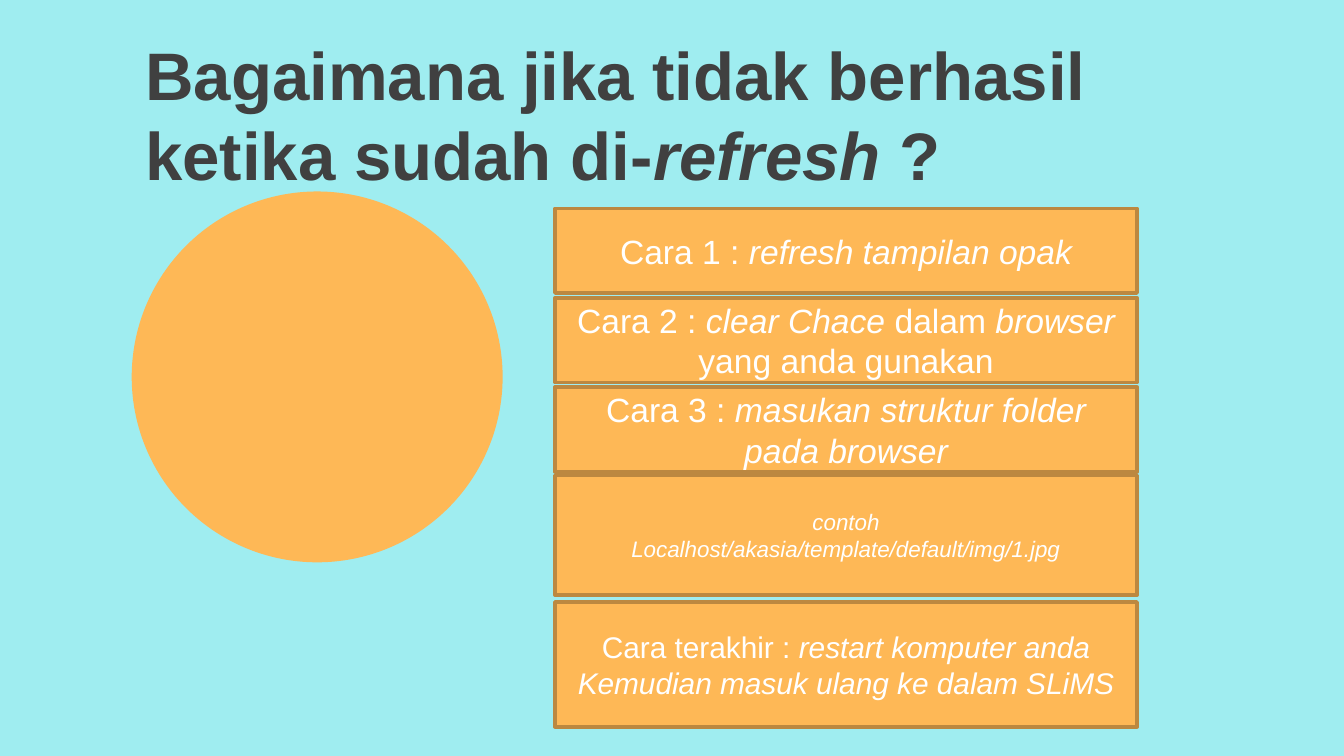
from dataclasses import dataclass

from pptx import Presentation
from pptx import util as u
from pptx.dml.color import RGBColor
from pptx.enum import shapes, text

Run = tuple[str, bool]  # wording, italic


@dataclass
class Step:
    top: float
    height: float
    size: int
    lines: list[list[Run]]


ORANGE, BROWN, WHITE, GREY, AQUA = "FEB856", "BC8840", "FFFFFF", "404040", "9FEDF0"
BOX_LEFT, BOX_WIDTH = 10.49, 11.0

TITLE = [("Bagaimana jika tidak berhasil ketika sudah di-", False),
         ("refresh", True), (" ?", False)]

STEPS = [
    Step(3.94, 1.6, 18, [[("Cara 1 : ", False), ("refresh tampilan opak", True)]]),
    Step(5.63, 1.6, 18, [[("Cara 2 : ", False), ("clear Chace ", True), ("dalam", False),
                          (" browser ", True), ("yang anda gunakan", False)]]),
    Step(7.32, 1.6, 18, [[("Cara 3 : ", False),
                          ("masukan struktur folder pada browser", True)]]),
    Step(8.99, 2.26, 12, [[("contoh", True)],
                          [("Localhost/akasia/template/default/img/1.jpg", True)]]),
    Step(11.38, 2.36, 16, [[("Cara terakhir : ", False), ("restart komputer anda", True)],
                           [("Kemudian masuk ulang ke dalam SLiMS", True)]]),
]


def rgb(value: str) -> RGBColor:
    return RGBColor.from_string(value)


def write(tf, lines: list[list[Run]], align, size: int, color: str, bold: bool = False) -> None:
    """Fill a text frame with one paragraph per line of runs."""
    frame = {"word_wrap": True, "auto_size": text.MSO_AUTO_SIZE.NONE,
             "vertical_anchor": text.MSO_ANCHOR.MIDDLE}
    for name, value in frame.items():
        setattr(tf, name, value)
    for i, line in enumerate(lines):
        p = tf.paragraphs[0] if i == 0 else tf.add_paragraph()
        p.alignment = align
        for wording, italic in line:
            r = p.add_run()
            r.text = wording
            r.font.color.rgb = rgb(color)
            font = {"name": "Arial", "size": u.Pt(size), "bold": bold, "italic": italic}
            for name, value in font.items():
                setattr(r.font, name, value)


def add_filled(s, kind, left: float, top: float, width: float, height: float):
    """Add an orange preset shape without shadow or outline."""
    sp = s.shapes.add_shape(kind, u.Cm(left), u.Cm(top), u.Cm(width), u.Cm(height))
    sp.shadow.inherit = False
    sp.fill.solid()
    sp.fill.fore_color.rgb = rgb(ORANGE)
    sp.line.fill.background()
    return sp


def add_step(s, step: Step) -> None:
    sp = add_filled(s, shapes.MSO_SHAPE.RECTANGLE, BOX_LEFT, step.top, BOX_WIDTH, step.height)
    sp.line.color.rgb = rgb(BROWN)
    sp.line.width = u.Pt(2)
    write(sp.text_frame, step.lines, text.PP_ALIGN.CENTER, step.size, WHITE)


def main() -> None:
    prs = Presentation()
    prs.slide_width, prs.slide_height = u.Cm(25.4), u.Cm(14.29)
    s = prs.slides.add_slide(prs.slide_layouts[5])
    s.background.fill.solid()
    s.background.fill.fore_color.rgb = rgb(AQUA)

    # Title
    title = s.shapes.title
    place = {"left": 2.49, "top": 1.35, "width": 21.59, "height": 1.6}
    for name, value in place.items():
        setattr(title, name, u.Cm(value))
    write(title.text_frame, [TITLE], text.PP_ALIGN.LEFT, 36, GREY, bold=True)

    # Circle on the left
    add_filled(s, shapes.MSO_SHAPE.OVAL, 2.49, 3.62, 7.01, 7.01)

    # Steps on the right
    for step in STEPS:
        add_step(s, step)

    prs.save("out.pptx")


if __name__ == "__main__":
    main()
